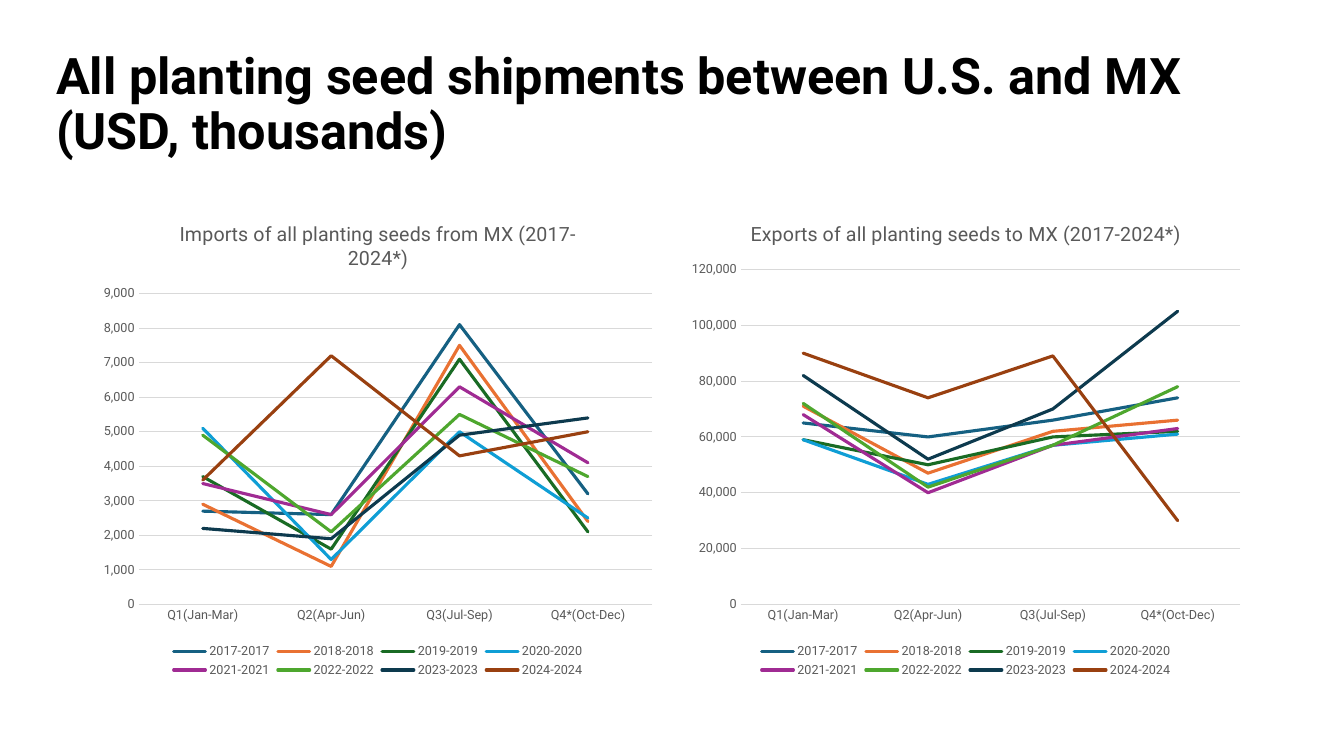
from dataclasses import dataclass

from pptx import Presentation
from pptx.chart.data import CategoryChartData
from pptx.dml.color import RGBColor
from pptx.enum.chart import XL_CHART_TYPE, XL_LEGEND_POSITION, XL_TICK_MARK
from pptx.enum.text import MSO_ANCHOR
from pptx.oxml.ns import qn
from pptx.util import Pt

EMU_PER_PX = 9525


@dataclass(frozen=True)
class Theme:
    font: str = "Roboto"
    heading: str = "000000"
    muted: str = "595959"
    rule: str = "D9D9D9"
    lines: tuple = ("156082", "E97132", "196B24", "0F9ED5",
                    "A02B93", "4EA72E", "0D3A4E", "994010")
    heading_size: int = 36
    chart_title_size: int = 14
    label_size: int = 9
    rule_width: float = 0.75
    line_width: float = 2.25


THEME = Theme()
QUARTERS = ("Q1(Jan-Mar)", "Q2(Apr-Jun)", "Q3(Jul-Sep)", "Q4*(Oct-Dec)")
FIRST_YEAR = 2017
IMPORTS = (
    (2700, 2600, 8100, 3200),
    (2900, 1100, 7500, 2400),
    (3700, 1600, 7100, 2100),
    (5100, 1300, 5000, 2500),
    (3500, 2600, 6300, 4100),
    (4900, 2100, 5500, 3700),
    (2200, 1900, 4900, 5400),
    (3600, 7200, 4300, 5000),
)
EXPORTS = (
    (65000, 60000, 66000, 74000),
    (71000, 47000, 62000, 66000),
    (59000, 50000, 60000, 62000),
    (59000, 43000, 57000, 61000),
    (68000, 40000, 57000, 63000),
    (72000, 42000, 57000, 78000),
    (82000, 52000, 70000, 105000),
    (90000, 74000, 89000, 30000),
)


def px(length):
    return length * EMU_PER_PX


def style_font(font, size, color, bold=False):
    font.name = THEME.font
    font.size = Pt(size)
    font.bold = bold
    font.color.rgb = RGBColor.from_string(color)


def style_line(line, color, width):
    line.color.rgb = RGBColor.from_string(color)
    line.width = Pt(width)


def add_heading(slide, text, left, top, width, height):
    frame = slide.shapes.add_textbox(px(left), px(top), px(width), px(height)).text_frame
    frame.word_wrap = True
    frame.vertical_anchor = MSO_ANCHOR.MIDDLE
    frame.text = text
    paragraph = frame.paragraphs[0]
    paragraph.line_spacing = 0.9
    style_font(paragraph.runs[0].font, THEME.heading_size, THEME.heading, bold=True)


def style_axes(chart, top_value, step):
    quarters, dollars = chart.category_axis, chart.value_axis
    for axis in (quarters, dollars):
        axis.major_tick_mark = axis.minor_tick_mark = XL_TICK_MARK.NONE
        style_font(axis.tick_labels.font, THEME.label_size, THEME.muted)
    style_line(quarters.format.line, THEME.rule, THEME.rule_width)
    dollars.format.line.fill.background()
    dollars.has_major_gridlines = True
    style_line(dollars.major_gridlines.format.line, THEME.rule, THEME.rule_width)
    dollars.minimum_scale, dollars.maximum_scale = 0, top_value
    dollars.major_unit = step
    dollars.tick_labels.number_format = "#,##0"
    dollars.tick_labels.number_format_is_linked = False


def style_year_lines(chart):
    for year_line, color in zip(chart.plots[0].series, THEME.lines):
        year_line.smooth = False
        style_line(year_line.format.line, color, THEME.line_width)
        for outline in year_line._element.iter(qn("a:ln")):
            outline.set("cap", "rnd")


def add_shipments_chart(slide, title, yearly_values, top_value, step, left, top, width, height):
    """Add a line chart with one line per year across the four quarters."""
    shipments = CategoryChartData(number_format="#,##0")
    shipments.categories = QUARTERS
    for year, values in enumerate(yearly_values, FIRST_YEAR):
        shipments.add_series(f"{year}-{year}", values)
    chart = slide.shapes.add_chart(
        XL_CHART_TYPE.LINE, px(left), px(top), px(width), px(height), shipments).chart
    chart.font.name = THEME.font
    chart.font.size = Pt(10)
    chart.plots[0].vary_by_categories = False

    chart.has_title = True
    chart.chart_title.include_in_layout = False
    title_line = chart.chart_title.text_frame.paragraphs[0]
    title_line.text = title
    style_font(title_line.runs[0].font, THEME.chart_title_size, THEME.muted)

    chart.has_legend = True
    chart.legend.position = XL_LEGEND_POSITION.BOTTOM
    chart.legend.include_in_layout = False
    style_font(chart.legend.font, THEME.label_size, THEME.muted)

    style_axes(chart, top_value, step)
    style_year_lines(chart)


def main():
    presentation = Presentation()
    presentation.slide_width, presentation.slide_height = px(1280), px(720)
    slide = presentation.slides.add_slide(presentation.slide_layouts[6])
    add_heading(slide, "All planting seed shipments between U.S. and MX (USD, thousands)",
                44, 31, 1104, 139)
    panels = (
        ("Imports of all planting seeds from MX (2017-2024*)", IMPORTS, 9000, 1000),
        ("Exports of all planting seeds to MX (2017-2024*)", EXPORTS, 120000, 20000),
    )
    for column, panel in enumerate(panels):
        add_shipments_chart(slide, *panel, 88 + 560 * column, 192, 544, 457)
    presentation.save("out.pptx")


if __name__ == "__main__":
    main()
